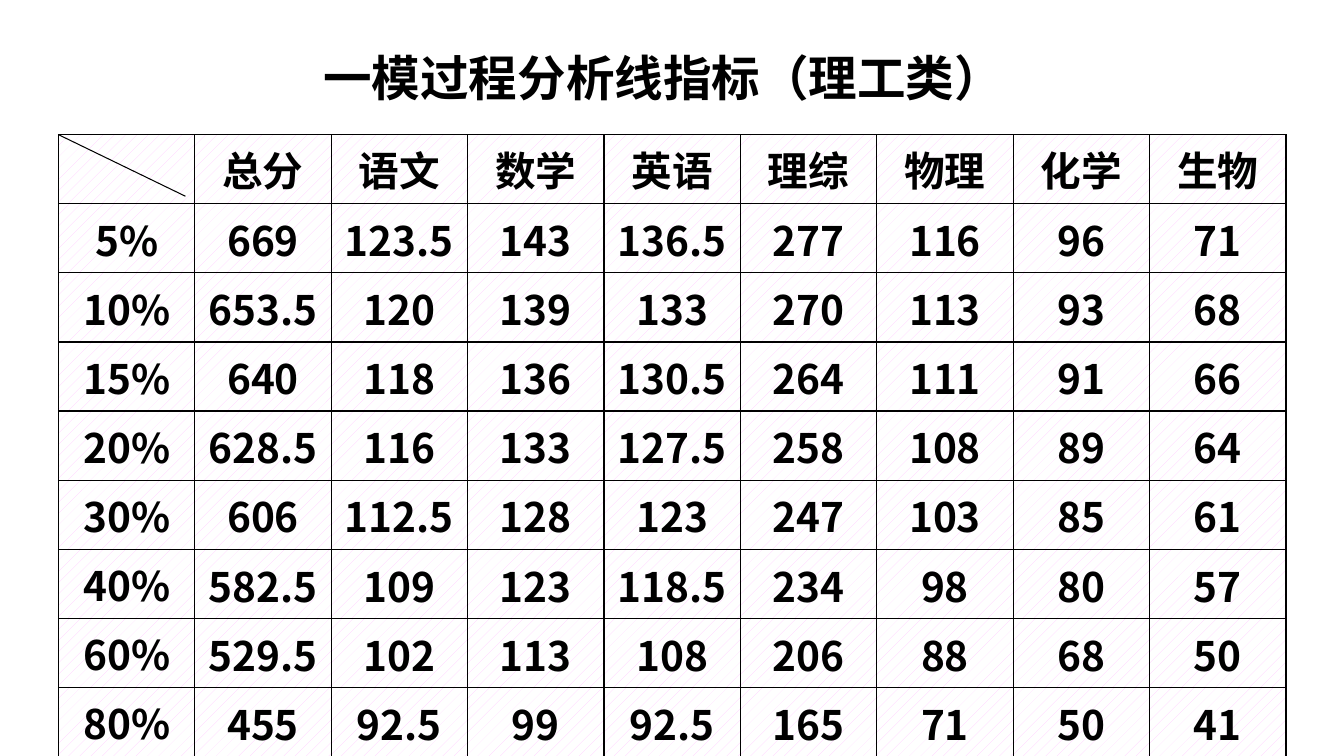
from dataclasses import dataclass

from lxml import etree
from pptx import Presentation
from pptx.dml.color import RGBColor
from pptx.enum import dml, shapes, text
from pptx.oxml import ns
from pptx.util import Pt


@dataclass(frozen=True)
class Theme:
    ink: str = "000000"
    tint: str = "FFCCFF"
    paper: str = "FFFFFF"
    font: str = "Noto Sans CJK SC"
    title: float = 34.7
    body: float = 29
    grid: float = 1
    slash: float = 0.75


THEME = Theme()
TITLE = "一模过程分析线指标（理工类）"
HEADS = ["", "总分", "语文", "数学", "英语", "理综", "物理", "化学", "生物"]
SCORES = [
    ["5%", "669", "123.5", "143", "136.5", "277", "116", "96", "71"],
    ["10%", "653.5", "120", "139", "133", "270", "113", "93", "68"],
    ["15%", "640", "118", "136", "130.5", "264", "111", "91", "66"],
    ["20%", "628.5", "116", "133", "127.5", "258", "108", "89", "64"],
    ["30%", "606", "112.5", "128", "123", "247", "103", "85", "61"],
    ["40%", "582.5", "109", "123", "118.5", "234", "98", "80", "57"],
    ["60%", "529.5", "102", "113", "108", "206", "88", "68", "50"],
    ["80%", "455", "92.5", "99", "92.5", "165", "71", "50", "41"],
]


def color(code):
    return RGBColor.from_string(code)


def add(parent, tag, **attrs):
    return etree.SubElement(parent, ns.qn(tag), **attrs)


def write(frame, words, size, before, lines=None, hang=0):
    para = frame.paragraphs[0]
    para.alignment = text.PP_ALIGN.CENTER
    if lines:
        para.line_spacing = lines
    props = para._p.get_or_add_pPr()
    if hang:
        props.set("marL", str(Pt(hang)))
        props.set("indent", str(-Pt(hang)))
    add(add(props, "a:spcBef"), "a:spcPct", val=str(before * 1000))
    run = para.add_run()
    run.text = words
    font = run.font
    font.name, font.size, font.bold = THEME.font, Pt(size), True
    font.color.rgb = color(THEME.ink)
    add(font._element, "a:ea", typeface=THEME.font)


def heading(slide, left, top, width, height):
    box = slide.shapes.add_textbox(Pt(left), Pt(top), Pt(width), Pt(height))
    frame = box.text_frame
    frame.word_wrap = True
    frame.vertical_anchor = text.MSO_ANCHOR.MIDDLE
    write(frame, TITLE, THEME.title, 50, lines=0.9, hang=36)


def style(cell, pads):
    cell.margin_left, cell.margin_top, cell.margin_right, cell.margin_bottom = map(Pt, pads)
    cell.vertical_anchor = text.MSO_ANCHOR.MIDDLE
    props = cell._tc.get_or_add_tcPr()
    for side in ("a:lnL", "a:lnR", "a:lnT", "a:lnB"):
        edge = add(props, side, w=str(Pt(THEME.grid)))
        add(add(edge, "a:solidFill"), "a:srgbClr", val=THEME.ink)
    cell.fill.patterned()
    cell.fill.pattern = dml.MSO_PATTERN.PERCENT_10
    cell.fill.fore_color.rgb = color(THEME.tint)
    cell.fill.back_color.rgb = color(THEME.paper)


def scores(slide, left, top, width, height):
    data = [HEADS] + SCORES
    rows, cols = len(data), len(HEADS)
    table = slide.shapes.add_table(
        rows, cols, Pt(left), Pt(top), Pt(width), Pt(height)
    ).table
    for col in table.columns:
        col.width = Pt(width / cols)
    for row in table.rows:
        row.height = Pt(height / rows)
    for r, line in enumerate(data):
        for c, words in enumerate(line):
            cell = table.cell(r, c)
            style(cell, (0.72, 0.72, 0.72, 0) if r and c else (7.2, 3.6, 7.2, 3.6))
            if words:
                write(cell.text_frame, words, THEME.body, 20)
    slash = slide.shapes.add_connector(
        shapes.MSO_CONNECTOR.STRAIGHT, Pt(left), Pt(top), Pt(left + 90.7), Pt(top + 44)
    )
    slash.line.color.rgb = color(THEME.ink)
    slash.line.width = Pt(THEME.slash)
    add(slash._element.spPr, "a:effectLst")


def main():
    deck = Presentation()
    deck.slide_width, deck.slide_height = Pt(960), Pt(540)
    slide = deck.slides.add_slide(deck.slide_layouts[6])
    scores(slide, 41.76, 96.2, 876.96, 443.5)
    heading(slide, 41.76, 12.96, 864, 90)
    deck.save("out.pptx")


if __name__ == "__main__":
    main()
